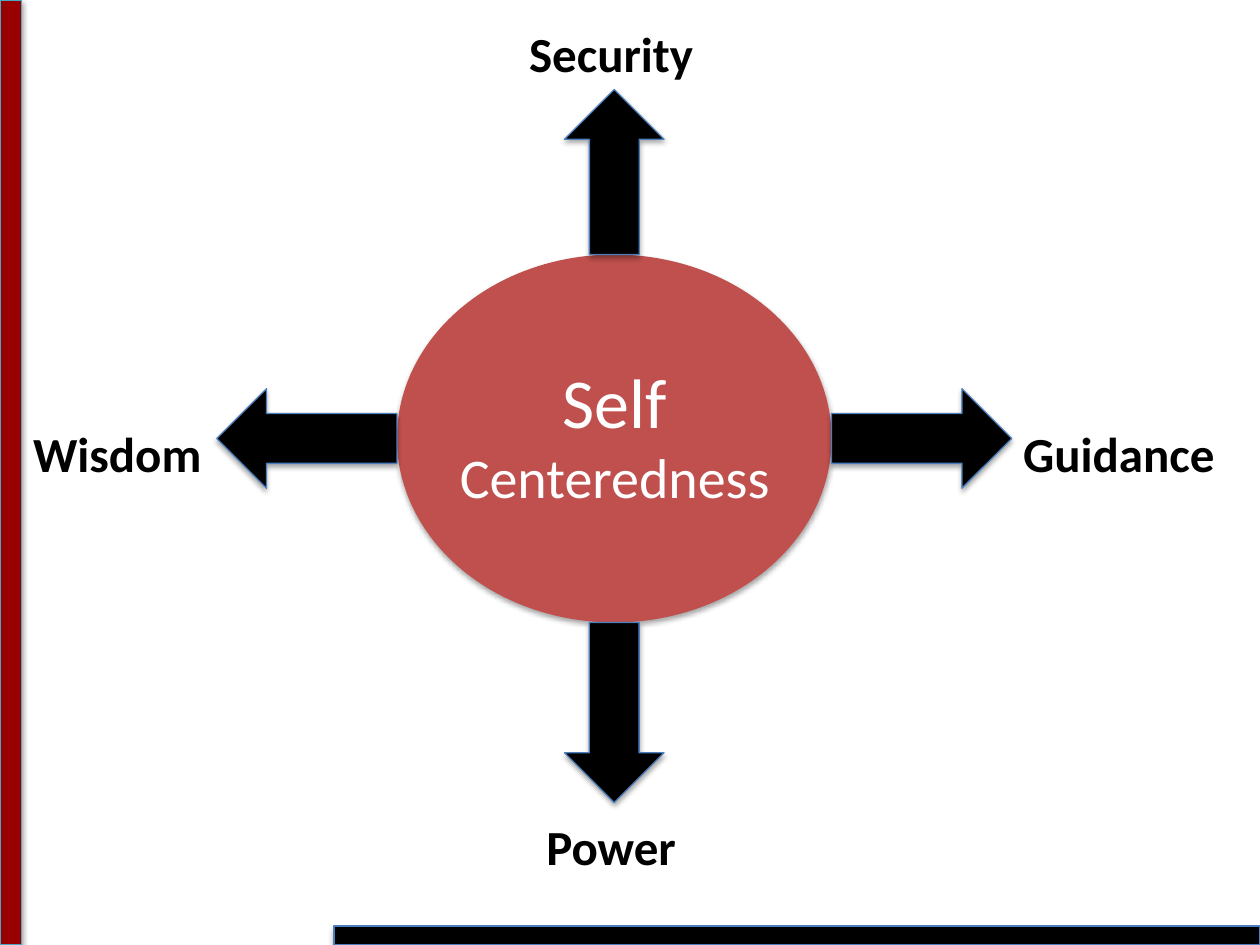
from dataclasses import dataclass

import pptx
import pptx.dml.color
import pptx.enum.shapes
import pptx.enum.text
import pptx.oxml
import pptx.oxml.ns
import pptx.util
from pptx.shapes.autoshape import Shape
from pptx.slide import Slide

SHAPES = pptx.enum.shapes.MSO_SHAPE


@dataclass(frozen=True)
class Theme:
    font: str = "Calibri"
    black: str = "000000"
    white: str = "FFFFFF"
    side_bar: str = "990000"
    side_line: str = "46AAC5"
    line: str = "4B7EBC"
    core: str = "C0504D"
    label_size: int = 28
    small_size: int = 32
    large_size: int = 40
    line_width: float = 0.75


@dataclass(frozen=True)
class Area:
    """A place on a grid of 100 columns by 75 rows."""
    column: float
    row: float
    columns: float
    rows: float

    def lengths(self) -> list[int]:
        return [cells(n) for n in (self.column, self.row, self.columns, self.rows)]


@dataclass(frozen=True)
class Line:
    text: str
    size: int
    color: str
    bold: bool = False


@dataclass(frozen=True)
class Direction:
    """One outcome: its label and the arrow that leads to it."""
    label: str
    across: int
    down: int
    length: float
    turn: int
    label_column: float
    label_row: float
    indent: float = 0


THEME = Theme()
CORE = Area(31.5, 20.2, 34.5, 29.2)
ARROW_WIDTH = 7.9
LABEL_COLUMNS, LABEL_ROWS = 22.4, 5.7
DIRECTIONS = (
    Direction("Power", 0, 1, 14.3, 0, 37.3, 64.3),
    Direction("Wisdom", -1, 0, 14.3, 90, -5, 33.1, indent=6.2),
    Direction("Guidance", 1, 0, 14.3, 270, 77.6, 33.1),
    Direction("Security", 0, -1, 13.1, 180, 37.3, 1.4),
)


def cells(count: float) -> int:
    return pptx.util.Inches(count / 10)


def rgb(color: str) -> pptx.dml.color.RGBColor:
    return pptx.dml.color.RGBColor.from_string(color)


def add_shadow(shape: Shape) -> None:
    shape.shadow.inherit = False
    effects = shape._element.spPr.find(pptx.oxml.ns.qn("a:effectLst"))
    effects.append(pptx.oxml.parse_xml(
        f'<a:outerShdw {pptx.oxml.ns.nsdecls("a")} blurRad="{pptx.util.Pt(3.1)}" '
        f'dist="{pptx.util.Pt(1.8)}" dir="5400000" rotWithShape="0">'
        f'<a:srgbClr val="{THEME.black}"><a:alpha val="35000"/></a:srgbClr>'
        '</a:outerShdw>'))


def add_solid(slide: Slide, kind: SHAPES, area: Area, fill: str,
              line: str | None = None, turn: int = 0) -> None:
    shape = slide.shapes.add_shape(kind, *area.lengths())
    shape.rotation = turn
    shape.fill.solid()
    shape.fill.fore_color.rgb = rgb(fill)
    if line:
        shape.line.color.rgb = rgb(line)
        shape.line.width = pptx.util.Pt(THEME.line_width)
    else:
        shape.line.fill.background()
    add_shadow(shape)


def add_text(slide: Slide, area: Area, lines: list[Line], indent: float = 0) -> None:
    box = slide.shapes.add_textbox(*area.lengths())
    frame = box.text_frame
    frame.word_wrap = True
    frame.auto_size = pptx.enum.text.MSO_AUTO_SIZE.SHAPE_TO_FIT_TEXT
    frame.margin_left = cells(1 + indent)
    for index, line in enumerate(lines):
        para = frame.add_paragraph() if index else frame.paragraphs[0]
        para.alignment = pptx.enum.text.PP_ALIGN.CENTER
        span = para.add_run()
        span.text = line.text
        span.font.name = THEME.font
        span.font.size = pptx.util.Pt(line.size)
        span.font.bold = line.bold
        span.font.color.rgb = rgb(line.color)


def add_arrow(slide: Slide, direction: Direction) -> None:
    """Start the arrow at the edge of the core and point it outwards."""
    middle_x = CORE.column + CORE.columns / 2
    middle_y = CORE.row + CORE.rows / 2
    middle_x += direction.across * (CORE.columns + direction.length) / 2
    middle_y += direction.down * (CORE.rows + direction.length) / 2
    area = Area(middle_x - ARROW_WIDTH / 2, middle_y - direction.length / 2,
                ARROW_WIDTH, direction.length)
    add_solid(slide, SHAPES.DOWN_ARROW, area, THEME.black, THEME.line, direction.turn)


def main() -> None:
    deck = pptx.Presentation()
    deck.slide_width, deck.slide_height = cells(100), cells(75)
    slide = deck.slides.add_slide(deck.slide_layouts[6])

    # Edge bars
    add_solid(slide, SHAPES.RECTANGLE, Area(0, 0, 1.7, 75),
              THEME.side_bar, THEME.side_line)
    add_solid(slide, SHAPES.RECTANGLE, Area(26.5, 73.5, 73.5, 1.5),
              THEME.black, THEME.line)

    # Core and its four arrows
    add_solid(slide, SHAPES.OVAL, CORE, THEME.core)
    for direction in DIRECTIONS:
        add_arrow(slide, direction)

    # Labels
    for direction in DIRECTIONS:
        area = Area(direction.label_column, direction.label_row,
                    LABEL_COLUMNS, LABEL_ROWS)
        label = Line(direction.label, THEME.label_size, THEME.black, bold=True)
        add_text(slide, area, [label], direction.indent)
    add_text(slide, Area(33.5, 28, 30.6, 13.1), [
        Line("Self", THEME.large_size, THEME.white),
        Line("Centeredness", THEME.small_size, THEME.white),
    ])

    deck.save("out.pptx")


if __name__ == "__main__":
    main()
